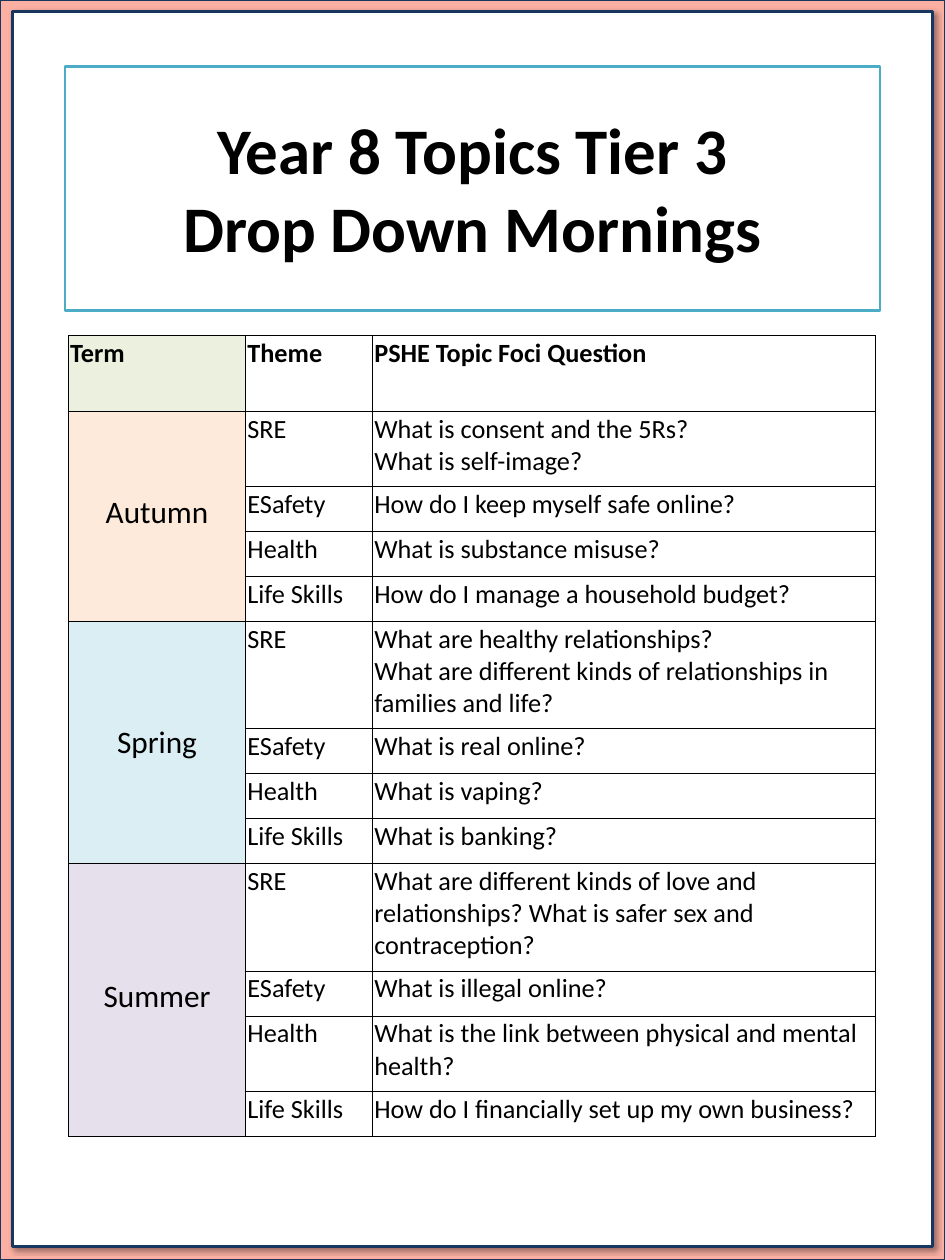
import pptx
import pptx.dml.color
import pptx.enum.shapes
import pptx.enum.text
import pptx.oxml
import pptx.oxml.ns
import pptx.util

Inches = pptx.util.Inches
Pt = pptx.util.Pt
RGBColor = pptx.dml.color.RGBColor
Align = pptx.enum.text.PP_ALIGN
Anchor = pptx.enum.text.MSO_ANCHOR

BLACK = RGBColor(0x00, 0x00, 0x00)
WHITE = RGBColor(0xFF, 0xFF, 0xFF)
SALMON = RGBColor(0xFC, 0xB0, 0xA3)
NAVY = RGBColor(0x17, 0x37, 0x5E)
TEAL = RGBColor(0x4B, 0xAC, 0xC6)
GREEN = RGBColor(0xEB, 0xF1, 0xDE)
ORANGE = RGBColor(0xFD, 0xEA, 0xDA)
BLUE = RGBColor(0xDB, 0xEE, 0xF4)
PURPLE = RGBColor(0xE6, 0xE0, 0xEC)

TITLE_FONT = {"name": "Calibri", "size": Pt(52), "bold": True}
HEADER_FONT = {"name": "Calibri", "size": Pt(21), "bold": True}
TERM_FONT = {"name": "Calibri", "size": Pt(25), "bold": False}
BODY_FONT = {"name": "Calibri", "size": Pt(21), "bold": False}
CELL_MARGINS = {
    "margin_left": Inches(0.02),
    "margin_top": Inches(0.02),
    "margin_right": Inches(0.02),
    "margin_bottom": Inches(0.1),
}
NO_MARGINS = dict.fromkeys(CELL_MARGINS, 0)

HEADERS = ["Term", "Theme", "PSHE Topic Foci Question"]
THEMES = ["SRE", "ESafety", "Health", "Life Skills"]
TERMS = [
    ("Autumn", ORANGE, CELL_MARGINS, [
        "What is consent and the 5Rs?\nWhat is self-image?",
        "How do I keep myself safe online?",
        "What is substance misuse?",
        "How do I manage a household budget?",
    ]),
    ("Spring", BLUE, NO_MARGINS, [
        "What are healthy relationships?\n"
        "What are different kinds of relationships in families and life?",
        "What is real online?",
        "What is vaping?",
        "What is banking?",
    ]),
    ("Summer", PURPLE, CELL_MARGINS, [
        "What are different kinds of love and relationships? "
        "What is safer sex and contraception?",
        "What is illegal online?",
        "What is the link between physical and mental health?",
        "How do I financially set up my own business?",
    ]),
]
COLUMN_WIDTHS = [1.97, 1.41, 5.59]
ROW_HEIGHTS = [0.84, 0.84, 0.5, 0.5, 0.5, 1.19, 0.5, 0.5, 0.5, 1.19, 0.5, 0.84, 0.5]


def apply_format(target, values):
    for name, value in values.items():
        setattr(target, name, value)


def write_text(text_frame, text, font, alignment):
    text_frame.text = text
    for paragraph in text_frame.paragraphs:
        paragraph.alignment = alignment
        for run in paragraph.runs:
            apply_format(run.font, font)
            run.font.color.rgb = BLACK


def add_panel(slide, box, fill, line, line_width):
    shape = slide.shapes.add_shape(
        pptx.enum.shapes.MSO_SHAPE.RECTANGLE, *map(Inches, box))
    shape.shadow.inherit = False
    shape.fill.solid()
    shape.fill.fore_color.rgb = fill
    shape.line.color.rgb = line
    shape.line.width = Pt(line_width)
    return shape


def add_drop_shadow(shape):
    effects = shape._element.spPr.find(pptx.oxml.ns.qn("a:effectLst"))
    effects.append(pptx.oxml.parse_xml(
        f'<a:outerShdw {pptx.oxml.ns.nsdecls("a")} blurRad="{Pt(4)}" dist="{Pt(3)}" '
        'dir="2700000" algn="tl" rotWithShape="0"><a:srgbClr val="000000">'
        '<a:alpha val="40000"/></a:srgbClr></a:outerShdw>'))


def add_page_frame(slide, box):
    left, top, width, height = box
    add_panel(slide, box, SALMON, NAVY, 2.25)
    page = add_panel(
        slide, (left + 0.14, top + 0.14, width - 0.28, height - 0.29), WHITE, NAVY, 2.25)
    add_drop_shadow(page)


def add_title(slide, box):
    title = add_panel(slide, box, WHITE, TEAL, 2)
    text_frame = title.text_frame
    apply_format(text_frame, {
        "word_wrap": True,
        "vertical_anchor": Anchor.MIDDLE,
        "margin_top": Inches(0.13),
    })
    write_text(text_frame, "Year 8 Topics Tier 3\nDrop Down Mornings", TITLE_FONT, Align.CENTER)
    for paragraph in text_frame.paragraphs:
        paragraph.line_spacing = 0.9
    text_frame.paragraphs[0].space_after = Pt(6)


def add_borders(cell):
    """Draw a thin black line on all four sides of a table cell."""
    properties = cell._tc.get_or_add_tcPr()
    for index, side in enumerate(("lnL", "lnR", "lnT", "lnB")):
        properties.insert(index, pptx.oxml.parse_xml(
            f'<a:{side} {pptx.oxml.ns.nsdecls("a")} w="{Pt(1)}"><a:solidFill>'
            f'<a:srgbClr val="{BLACK}"/></a:solidFill></a:{side}>'))


def fill_cell(cell, text, font, fill=None, alignment=Align.LEFT,
              anchor=Anchor.TOP, margins=CELL_MARGINS):
    write_text(cell.text_frame, text, font, alignment)
    apply_format(cell, {**margins, "vertical_anchor": anchor})
    if fill is not None:
        cell.fill.solid()
        cell.fill.fore_color.rgb = fill


def add_topics_table(slide, box):
    table = slide.shapes.add_table(
        len(ROW_HEIGHTS), len(COLUMN_WIDTHS), *map(Inches, box)).table
    for column, width in zip(table.columns, COLUMN_WIDTHS):
        column.width = Inches(width)
    for row, height in zip(table.rows, ROW_HEIGHTS):
        row.height = Inches(height)
    for cell in table.iter_cells():
        cell.fill.background()
        add_borders(cell)

    for column, header in enumerate(HEADERS):
        fill_cell(table.cell(0, column), header, HEADER_FONT, GREEN if column == 0 else None)
    for index, (term, colour, margins, questions) in enumerate(TERMS):
        first = 1 + index * len(THEMES)
        term_cell = table.cell(first, 0)
        term_cell.merge(table.cell(first + len(THEMES) - 1, 0))
        fill_cell(term_cell, term, TERM_FONT, colour, Align.CENTER, Anchor.MIDDLE, margins)
        for row, (theme, question) in enumerate(zip(THEMES, questions), first):
            fill_cell(table.cell(row, 1), theme, BODY_FONT)
            fill_cell(table.cell(row, 2), question, BODY_FONT)


def main():
    presentation = pptx.Presentation()
    presentation.slide_width = Inches(10.5)
    presentation.slide_height = Inches(14)
    slide = presentation.slides.add_slide(presentation.slide_layouts[6])
    add_page_frame(slide, (0, -0.01, 10.5, 14.01))
    add_title(slide, (0.72, 0.74, 9.06, 2.71))
    add_topics_table(slide, (0.76, 3.73, 8.97, 8.88))
    presentation.save("out.pptx")


if __name__ == "__main__":
    main()
